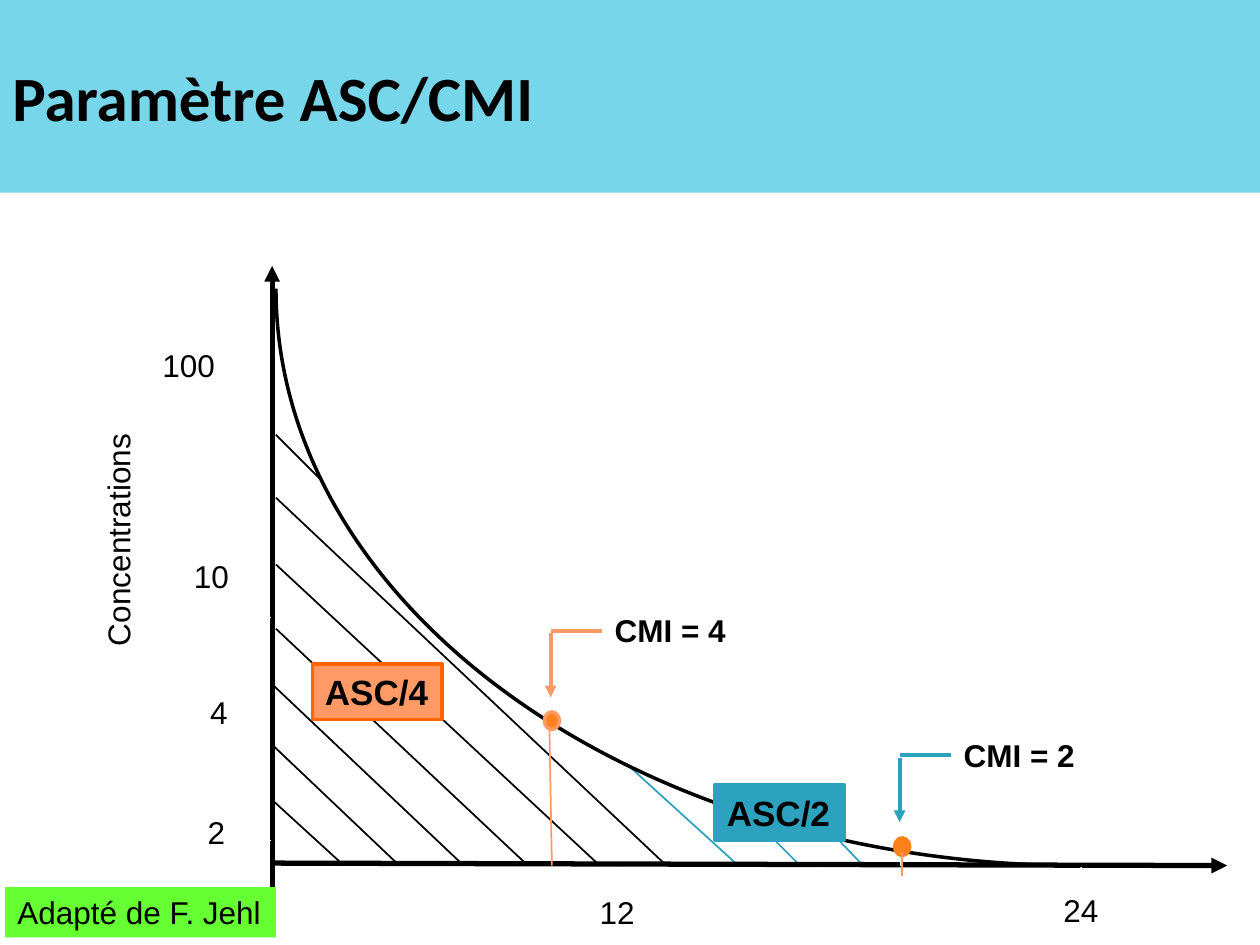
from dataclasses import dataclass

from pptx import Presentation
from pptx import util as u
from pptx.dml.color import RGBColor
from pptx.enum import shapes, text
from pptx.oxml.ns import qn
from pptx.oxml.xmlchemy import OxmlElement


@dataclass(frozen=True)
class Theme:
    black: str = "000000"
    white: str = "FFFFFF"
    teal: str = "2DA2BF"
    band: str = "78D6EA"
    salmon: str = "FF9966"
    orange: str = "FF6600"
    dot: str = "FF8119"
    green: str = "66FF33"
    body_font: str = "Arial"
    title_font: str = "Calibri"
    label_size: int = 18
    box_size: int = 20
    title_size: int = 36


T = Theme()


def rgb(color):
    return RGBColor.from_string(color)


def add_line(parent, start, end, color=T.black, width=1, arrow=None):
    """Straight line; arrow is 'headEnd' (at start) or 'tailEnd' (at end)."""
    points = [u.Inches(v) for v in (*start, *end)]
    s = parent.add_connector(shapes.MSO_CONNECTOR.STRAIGHT, *points)
    s.line.color.rgb = rgb(color)
    s.line.width = u.Pt(width)
    if arrow:
        tip = OxmlElement(f"a:{arrow}")
        tip.set("type", "triangle")
        s.line._get_or_add_ln().append(tip)
    s._element.spPr.append(OxmlElement("a:effectLst"))
    return s


def set_text(s, words, size, bold=False, font=T.body_font):
    tf = s.text_frame
    p = tf.paragraphs[0]
    p.text = words
    p.alignment = text.PP_ALIGN.LEFT
    p.font.name, p.font.size, p.font.bold = font, u.Pt(size), bold
    p.font.color.rgb = rgb(T.black)
    return tf


def add_label(parent, words, left, top, width, bold=False, rotation=0):
    s = parent.add_textbox(*map(u.Inches, (left, top, width, 0.41)))
    s.rotation = rotation
    set_text(s, words, T.label_size, bold).word_wrap = False
    return s


def add_block(parent, kind, box, fill, line=None, width=2):
    s = parent.add_shape(kind, *map(u.Inches, box))
    s.shadow.inherit = False
    s.fill.solid()
    s.fill.fore_color.rgb = rgb(fill)
    if line:
        s.line.color.rgb = rgb(line)
        s.line.width = u.Pt(width)
    else:
        s.line.fill.background()
    return s


def add_box(parent, words, box, fill, line=None, size=T.box_size, bold=True):
    s = add_block(parent, shapes.MSO_SHAPE.RECTANGLE, box, fill, line)
    set_text(s, words, size, bold).word_wrap = False
    return s


def add_curve(parent, start, *controls):
    """One cubic Bézier curve from start through two handles to the end."""
    builder = parent.build_freeform(*map(u.Inches, start))
    builder.add_line_segments([tuple(map(u.Inches, c)) for c in controls], close=False)
    s = builder.convert_to_shape()
    s.shadow.inherit = False
    s.fill.background()
    s.line.color.rgb = rgb(T.black)
    s.line.width = u.Pt(2)
    # Merge the three segments into a single curve
    path = s._element.find(".//" + qn("a:path"))
    bezier = OxmlElement("a:cubicBezTo")
    for segment in path.findall(qn("a:lnTo")):
        bezier.append(segment[0])
        path.remove(segment)
    path.append(bezier)


def add_callout(parent, label, elbow_x, color):
    """Bar from the label's left side, then an arrow down to the curve."""
    group = parent.add_group_shape().shapes
    y = u.Emu(label.top + label.height // 2).inches
    bar = add_line(group, (u.Emu(label.left).inches, y), (elbow_x, y), color, 2.25)
    bar.begin_connect(label, 1)
    add_line(group, (elbow_x, y + 0.02), (elbow_x, y + 0.53), color, 2.25, "tailEnd")


def add_title(parent):
    s = add_block(parent, shapes.MSO_SHAPE.RECTANGLE, (0, 0, 10, 1.53), T.band)
    tf = set_text(s, "Paramètre ASC/CMI", T.title_size, True, T.title_font)
    tf.vertical_anchor = text.MSO_ANCHOR.MIDDLE
    tf.word_wrap = True


def add_axes(parent):
    add_line(parent, (2.16, 2.11), (2.16, 7.07), width=3, arrow="headEnd")
    add_line(parent, (2.17, 6.85), (9.74, 6.87), width=3, arrow="tailEnd")
    # White ticks
    for y, right in ((2.94, 2.13), (4.9, 2.15), (5.67, 2.13), (6.67, 2.15)):
        add_line(parent, (1.99, y), (right, y), T.white)
    for x in (4.93, 6.52, 8.58):
        add_line(parent, (x, 6.88), (x, 7.02), T.white)
    add_line(parent, (7.15, 6.78), (7.15, 6.87), T.white)


def add_axis_labels(parent):
    add_label(parent, "Concentrations", -0.01, 4.07, 1.9, rotation=270)
    for words, left, top, width in (
        ("100", 1.19, 2.7, 0.63),
        ("10", 1.44, 4.37, 0.49),
        ("4", 1.57, 5.45, 0.35),
        ("2", 1.55, 6.4, 0.35),
        ("12", 4.66, 7.04, 0.49),
        ("24", 8.34, 7.02, 0.49),
    ):
        add_label(parent, words, left, top, width)


def add_hatching(parent):
    base = 6.87
    add_line(parent, (2.19, 3.45), (2.54, 3.8))
    for x, y, foot in (
        (2.19, 3.95, 5.29), (2.19, 4.48, 4.76), (2.19, 4.99, 4.19),
        (2.17, 5.44, 3.68), (2.17, 5.92, 3.17), (2.15, 6.34, 2.73),
    ):
        add_line(parent, (x, y), (foot, base))
    for x, y, foot in ((4.98, 6.07, 5.86), (5.93, 6.45, 6.35), (6.63, 6.64, 6.85)):
        add_line(parent, (x, y), (foot, base), T.teal)


def main():
    prs = Presentation()
    prs.slide_width, prs.slide_height = u.Inches(10), u.Inches(7.5)
    s = prs.slides.add_slide(prs.slide_layouts[6]).shapes

    # Graph
    add_hatching(s)
    add_axes(s)
    add_curve(s, (8.58, 6.87), (5.05, 6.87), (2.19, 4.82), (2.19, 2.29))
    add_line(s, (4.36, 5.74), (4.38, 6.87), T.salmon)
    add_axis_labels(s)

    # Areas under the curve
    add_box(s, "ASC/2", (5.67, 6.23, 1.03, 0.44), T.teal, T.teal)
    add_box(s, "ASC/4", (2.48, 5.27, 1.03, 0.44), T.salmon, T.orange)

    # Points at each CMI
    oval = shapes.MSO_SHAPE.OVAL
    add_block(s, oval, (4.32, 5.65, 0.12, 0.14), T.dot, T.salmon)
    add_block(s, oval, (7.1, 6.65, 0.12, 0.14), T.dot, T.dot)
    for words, left, top, elbow_x, color in (
        ("CMI = 4", 4.78, 4.8, 4.37, T.salmon),
        ("CMI = 2", 7.55, 5.79, 7.14, T.teal),
    ):
        label = add_label(s, words, left, top, 1.1, bold=True)
        add_callout(s, label, elbow_x, color)

    # Credit and title
    credit = add_box(s, "Adapté de F. Jehl", (0.04, 7.04, 2.15, 0.4), T.green,
                     size=T.label_size, bold=False)
    credit.text_frame.vertical_anchor = text.MSO_ANCHOR.BOTTOM
    add_title(s)
    add_line(s, (7.16, 6.76), (7.16, 6.95), T.salmon)

    prs.save("out.pptx")


if __name__ == "__main__":
    main()
